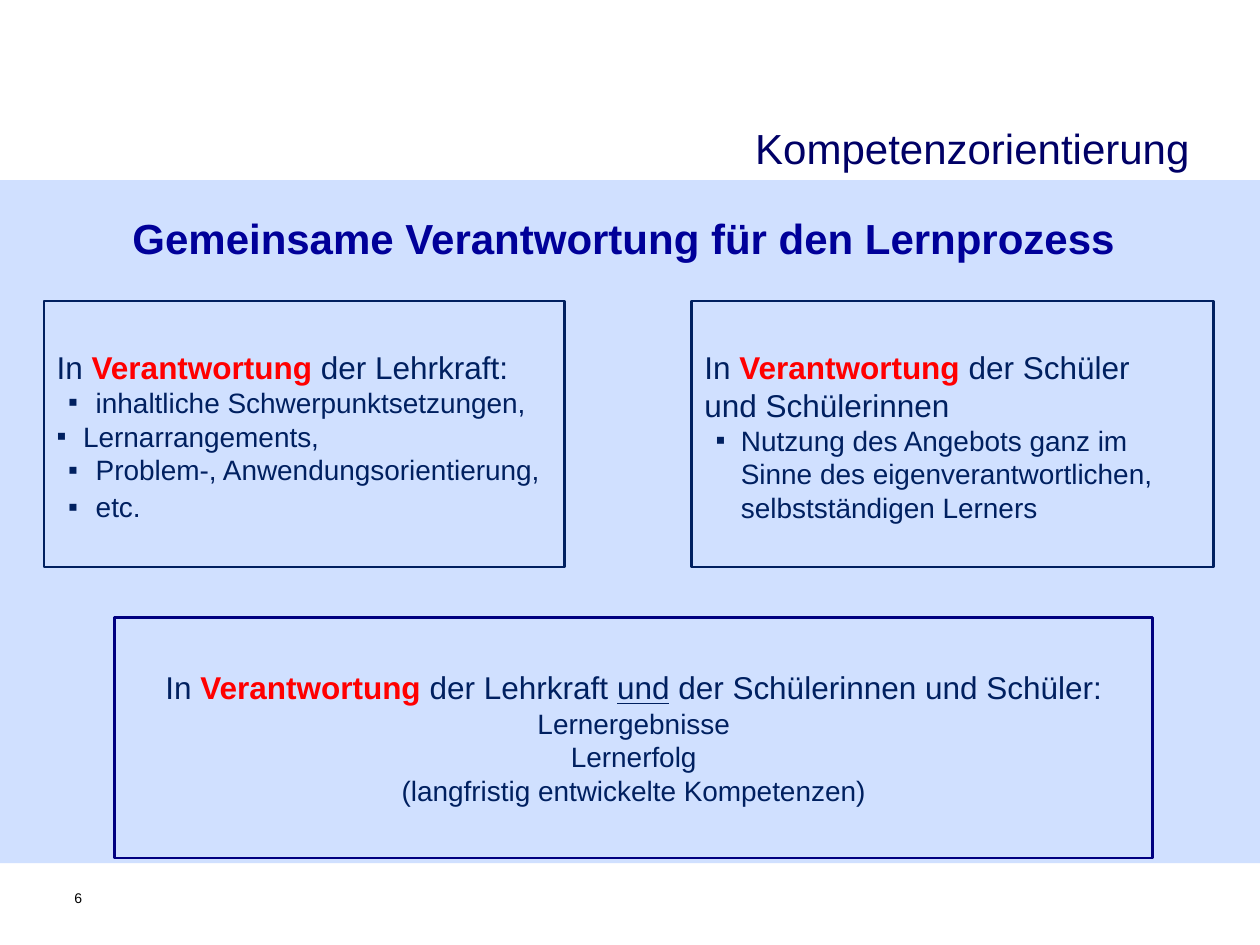
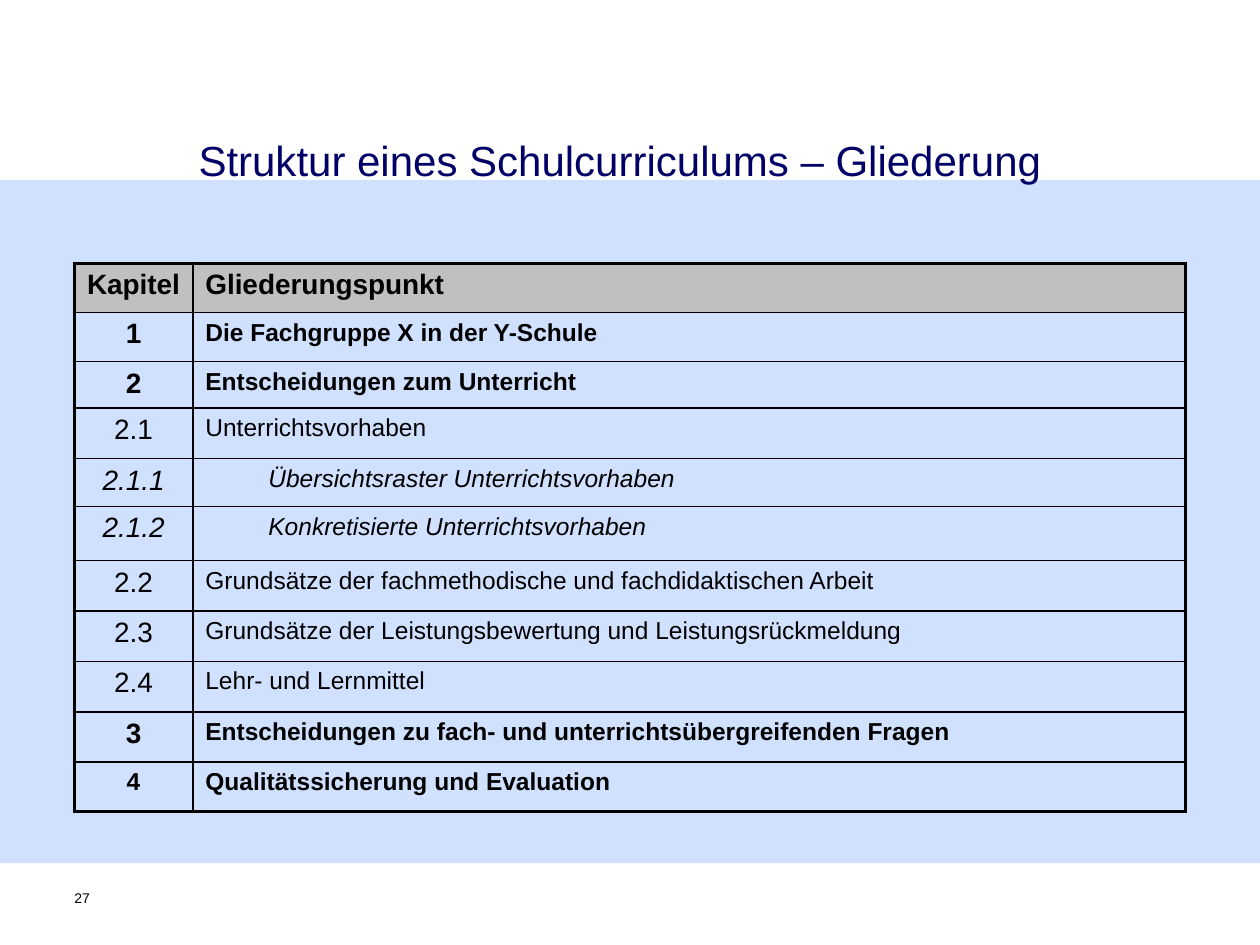
from dataclasses import dataclass
from typing import NamedTuple, Sequence

from lxml import etree
from pptx import Presentation
from pptx.dml.color import RGBColor
from pptx.enum.shapes import MSO_SHAPE
from pptx.enum.text import MSO_ANCHOR, MSO_AUTO_SIZE, PP_ALIGN
from pptx.oxml.ns import qn
from pptx.util import Inches, Pt

RECT = MSO_SHAPE.RECTANGLE
LEFT, CENTER, RIGHT = PP_ALIGN.LEFT, PP_ALIGN.CENTER, PP_ALIGN.RIGHT
TOP, MIDDLE = MSO_ANCHOR.TOP, MSO_ANCHOR.MIDDLE

FONT = "Arial"
BLACK = RGBColor(0x00, 0x00, 0x00)
RED = RGBColor(0xFF, 0x00, 0x00)
INK = RGBColor(0x00, 0x20, 0x60)
NAVY = RGBColor(0x00, 0x00, 0x80)
TITLE_BLUE = RGBColor(0x00, 0x00, 0x66)
HEADLINE_BLUE = RGBColor(0x00, 0x00, 0x99)
BAND_BLUE = RGBColor(0x66, 0x99, 0xFF)
HEADER_GREY = RGBColor(0xC0, 0xC0, 0xC0)
BAND_OPACITY = 30

SLIDE_W, SLIDE_H = Inches(10), Inches(7.5)
COL, ROW = SLIDE_W / 100, SLIDE_H / 75
TITLE_LAYOUT, TWO_LISTS_LAYOUT = 5, 3


class Box(NamedTuple):
    """A place on the grid of 100 columns and 75 rows."""
    left: float
    top: float
    width: float
    height: float

    def emu(self) -> tuple[int, ...]:
        return (round(self.left * COL), round(self.top * ROW),
                round(self.width * COL), round(self.height * ROW))


class Run(NamedTuple):
    text: str
    color: RGBColor = INK
    bold: bool = False
    underline: bool = False


@dataclass(frozen=True)
class Item:
    """A bulleted line; text and hanging bullet are measured in columns."""
    text: str
    indent: float = 3.1
    hang: float = 2.2
    before: float = 0


@dataclass(frozen=True)
class Chapter:
    number: str
    heading: str
    rows: float
    number_size: int = 16


BAND = Box(0, 14.3, 100, 54.2)
PAGE_NUMBER = Box(5.9, 70.6, 3.2, 3.7)
HEADLINE = Box(7.5, 16.4, 84, 5)
TEACHER_BOX = Box(3.5, 23.9, 41.3, 21.1)
STUDENT_BOX = Box(54.9, 23.9, 41.4, 21.1)
SHARED_BOX = Box(9.1, 49, 82.4, 19.1)
TABLE = Box(5.9, 20.9, 88.2, 43.3)
TABLE_COLS = (9.4, 78.8)
HEADER_ROWS = 3.9
LIST_INSET_ROWS = 3.7

DUTY = Run("Verantwortung", RED, bold=True)
TEACHER_ITEMS = (
    Item("inhaltliche Schwerpunktsetzungen,"),
    Item("Lernarrangements,", indent=2.1, hang=2.1),
    Item("Problem-, Anwendungsorientierung,"),
    Item("etc.", before=2),
)
STUDENT_ITEMS = (
    Item("Nutzung des Angebots ganz im Sinne des eigenverantwortlichen, "
         "selbstständigen Lerners", indent=2.9, hang=2),
)
SHARED_RESULTS = ("Lernergebnisse", "Lernerfolg",
                  "(langfristig entwickelte Kompetenzen)")
CHAPTERS = (
    Chapter("1", "Die Fachgruppe X in der Y-Schule", 3.9),
    Chapter("2", "Entscheidungen zum Unterricht", 3.7),
    Chapter("2.1", "Unterrichtsvorhaben", 4),
    Chapter("2.1.1", "Übersichtsraster Unterrichtsvorhaben", 3.8),
    Chapter("2.1.2", "Konkretisierte Unterrichtsvorhaben", 4.3),
    Chapter("2.2", "Grundsätze der fachmethodische und fachdidaktischen Arbeit", 4),
    Chapter("2.3", "Grundsätze der Leistungsbewertung und Leistungsrückmeldung", 4),
    Chapter("2.4", "Lehr- und Lernmittel", 4),
    Chapter("3", "Entscheidungen zu fach- und unterrichtsübergreifenden Fragen", 4),
    Chapter("4", "Qualitätssicherung und Evaluation", 3.9, number_size=14),
)


def write(tf, text: str | Sequence[Run], *, size: float, color: RGBColor = INK,
          bold: bool = False, italic: bool = False, align=LEFT, bullet: str = "",
          indent: float = 0, hang: float = 0, before: float = 0) -> None:
    """Add a paragraph, filling the first one while it is still empty."""
    p = tf.paragraphs[0]
    if p.runs:
        p = tf.add_paragraph()
    p.alignment, p.space_before = align, Pt(before)
    pPr = p._p.get_or_add_pPr()
    pPr.set("marL", str(round(indent * COL)))
    pPr.set("indent", str(round(-hang * COL)))
    if bullet:
        etree.SubElement(pPr, qn("a:buFont"), typeface=FONT)
        etree.SubElement(pPr, qn("a:buChar"), char=bullet)
    else:
        etree.SubElement(pPr, qn("a:buNone"))
    runs = [Run(text, color, bold)] if isinstance(text, str) else text
    for run in runs:
        r = p.add_run()
        r.text = run.text
        font = r.font
        font.name, font.size, font.color.rgb = FONT, Pt(size), run.color
        font.bold, font.italic, font.underline = run.bold, italic, run.underline


def prepare(sp, box: Box, anchor=TOP):
    """Place a shape and return its wrapped text frame."""
    sp.left, sp.top, sp.width, sp.height = box.emu()
    tf = sp.text_frame
    tf.word_wrap, tf.auto_size, tf.vertical_anchor = True, MSO_AUTO_SIZE.NONE, anchor
    return tf


def set_insets(tf, inset: int) -> None:
    tf.margin_left = tf.margin_top = tf.margin_right = tf.margin_bottom = inset


def outline(sp, color: RGBColor) -> None:
    sp.line.color.rgb, sp.line.width = color, Pt(1.5)


def add_text_box(slide, box: Box):
    return prepare(slide.shapes.add_textbox(*box.emu()), box)


def add_base_slide(prs, layout: int, title: str, title_box: Box, align, page: int):
    """Add a slide with the shared band, title and page number."""
    slide = prs.slides.add_slide(prs.slide_layouts[layout])
    band = slide.shapes.add_shape(RECT, *BAND.emu())
    band.shadow.inherit = False
    band.fill.solid()
    band.fill.fore_color.rgb = BAND_BLUE
    band.line.fill.background()
    srgb = band._element.spPr.find(f".//{qn('a:srgbClr')}")
    etree.SubElement(srgb, qn("a:alpha"), val=str(BAND_OPACITY * 1000))
    slide.shapes._spTree.insert(2, band._element)

    write(prepare(slide.shapes.title, title_box), title,
          size=24, color=TITLE_BLUE, align=align)
    tf = add_text_box(slide, PAGE_NUMBER)
    set_insets(tf, 0)
    write(tf, str(page), size=8, color=BLACK)
    return slide


def fill_list(sp, box: Box, heading: Sequence[Sequence[Run]],
              items: Sequence[Item]) -> None:
    tf = prepare(sp, box)
    outline(sp, INK)
    tf.margin_top = round(LIST_INSET_ROWS * ROW)
    for line in heading:
        write(tf, line, size=18)
    for item in items:
        write(tf, item.text, size=16, bullet="▪", indent=item.indent,
              hang=item.hang, before=item.before)


def build_responsibility(prs) -> None:
    slide = add_base_slide(prs, TWO_LISTS_LAYOUT, "Kompetenzorientierung",
                           Box(51.5, 9.2, 43.9, 5.1), RIGHT, 6)
    write(add_text_box(slide, HEADLINE), "Gemeinsame Verantwortung für den Lernprozess",
          size=24, color=HEADLINE_BLUE, bold=True, align=CENTER)
    fill_list(slide.placeholders[1], TEACHER_BOX,
              [[Run("In "), DUTY, Run(" der Lehrkraft:")]], TEACHER_ITEMS)
    fill_list(slide.placeholders[2], STUDENT_BOX,
              [[Run("In "), DUTY, Run(" der Schüler")], [Run("und Schülerinnen")]],
              STUDENT_ITEMS)

    sp = slide.shapes.add_shape(RECT, *SHARED_BOX.emu())
    sp.shadow.inherit = False
    sp.fill.background()
    outline(sp, NAVY)
    tf = prepare(sp, SHARED_BOX, MIDDLE)
    write(tf, [Run("In "), DUTY, Run(" der Lehrkraft "), Run("und", underline=True),
               Run(" der Schülerinnen und Schüler:")], size=18, align=CENTER)
    for result in SHARED_RESULTS:
        write(tf, result, size=16, align=CENTER)


def set_borders(cell, outer: dict[str, bool]) -> None:
    """Draw thick lines on the outer sides and thin ones on the rest."""
    tcPr = cell._tc.get_or_add_tcPr()
    for i, (side, is_outer) in enumerate(outer.items()):
        ln = etree.Element(qn(f"a:ln{side}"), w=str(Pt(2.25 if is_outer else 1)))
        fill = etree.SubElement(ln, qn("a:solidFill"))
        etree.SubElement(fill, qn("a:srgbClr"), val=str(BLACK))
        tcPr.insert(i, ln)


def build_outline(prs) -> None:
    slide = add_base_slide(prs, TITLE_LAYOUT,
                           "Struktur eines Schulcurriculums – Gliederung",
                           Box(5.1, 10.7, 88.2, 5.4), CENTER, 27)
    set_insets(slide.shapes.title.text_frame, 0)
    last = len(CHAPTERS)
    table = slide.shapes.add_table(last + 1, 2, *TABLE.emu()).table
    table.first_row = table.horz_banding = False
    for column, width in zip(table.columns, TABLE_COLS):
        column.width = round(width * COL)
    for row, height in zip(table.rows, (HEADER_ROWS, *(c.rows for c in CHAPTERS))):
        row.height = round(height * ROW)

    for i in range(last + 1):
        for j in range(2):
            cell = table.cell(i, j)
            cell.fill.background()
            cell.margin_top = cell.margin_bottom = Inches(0.05)
            cell.margin_left = cell.margin_right = Inches(0.1 if j else 0.05)
            set_borders(cell, {"L": j == 0, "R": j == 1, "T": i == 0, "B": i == last})

    for j, label in enumerate(("Kapitel", "Gliederungspunkt")):
        cell = table.cell(0, j)
        cell.fill.solid()
        cell.fill.fore_color.rgb = HEADER_GREY
        write(cell.text_frame, label, size=16, color=BLACK, bold=True,
              align=LEFT if j else CENTER)
    for i, chapter in enumerate(CHAPTERS, 1):
        depth = chapter.number.count(".")
        style = {"color": BLACK, "bold": depth == 0, "italic": depth == 2}
        write(table.cell(i, 0).text_frame, chapter.number,
              size=chapter.number_size, align=CENTER, **style)
        write(table.cell(i, 1).text_frame, chapter.heading, size=14,
              indent=5 if depth == 2 else 0, **style)


def main() -> None:
    prs = Presentation()
    prs.slide_width, prs.slide_height = SLIDE_W, SLIDE_H
    build_responsibility(prs)
    build_outline(prs)
    prs.save("out.pptx")


if __name__ == "__main__":
    main()
